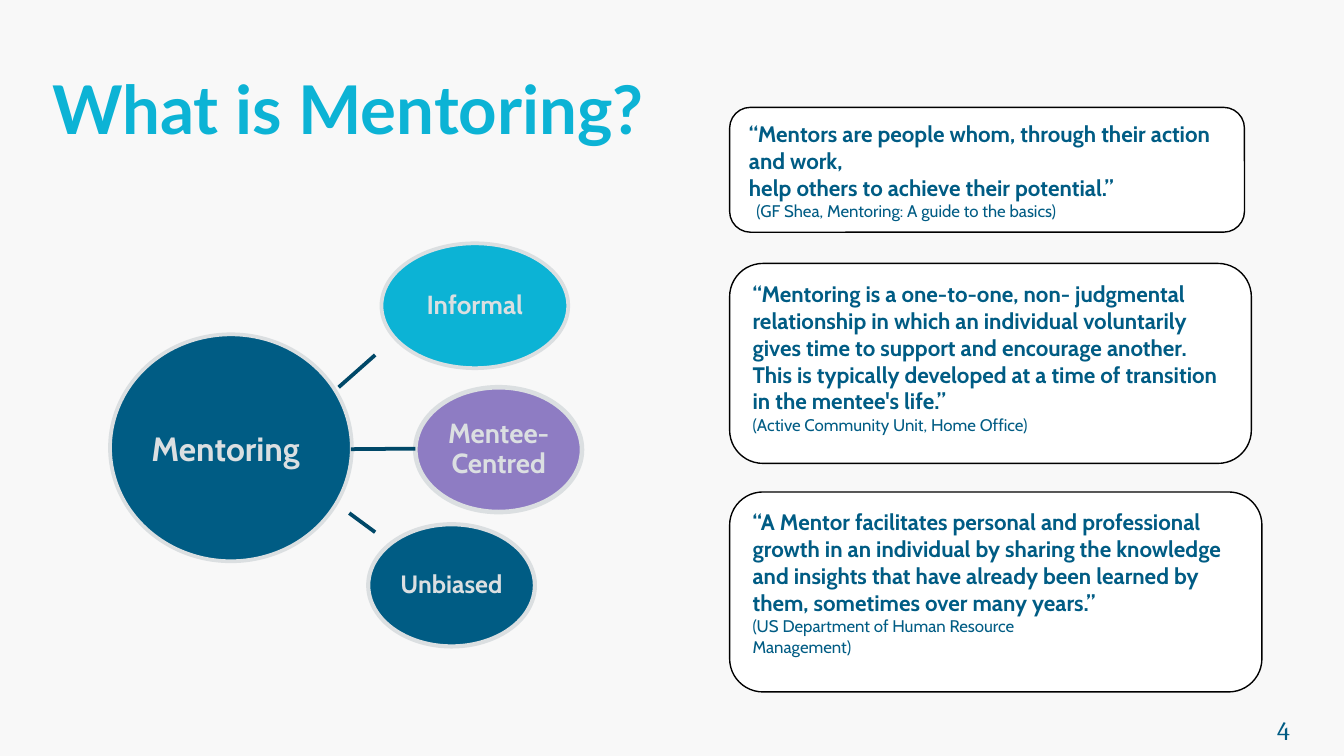
from lxml import etree
from pptx import Presentation
from pptx.dml.color import RGBColor
from pptx.enum.shapes import MSO_CONNECTOR, MSO_SHAPE
from pptx.enum.text import MSO_ANCHOR, PP_ALIGN
from pptx.oxml.ns import qn
from pptx.util import Cm, Pt

OVAL = MSO_SHAPE.OVAL
CARD = MSO_SHAPE.FLOWCHART_ALTERNATE_PROCESS
STRAIGHT = MSO_CONNECTOR.STRAIGHT
TOP, MIDDLE, BOTTOM = MSO_ANCHOR.TOP, MSO_ANCHOR.MIDDLE, MSO_ANCHOR.BOTTOM
LEFT, CENTER, RIGHT = PP_ALIGN.LEFT, PP_ALIGN.CENTER, PP_ALIGN.RIGHT

COLORS = {
    "background": "F8F8F8",
    "cyan": "0CB3D5",
    "blue": "005C84",
    "purple": "8E7CC3",
    "pale": "DBDFE1",
    "navy": "004868",
    "white": "FFFFFF",
    "black": "000000",
}


def rgb(name):
    return RGBColor.from_string(COLORS[name])


def write(p, text, font="Cabin", size=12, color="blue", bold=True,
          align=LEFT, spacing=1.0, indent=0):
    p.alignment = align
    p.line_spacing = spacing
    if indent:
        p._p.get_or_add_pPr().set("marL", str(Cm(indent)))
    r = p.add_run()
    r.text = text
    r.font.name = font
    r.font.size = Pt(size)
    r.font.bold = bold
    r.font.color.rgb = rgb(color)


class Deck:
    def __init__(self, width, height):
        self.prs = Presentation()
        self.prs.slide_width, self.prs.slide_height = Cm(width), Cm(height)
        self.s = self.prs.slides.add_slide(self.prs.slide_layouts[6])
        fill = self.s.background.fill
        fill.solid()
        fill.fore_color.rgb = rgb("background")

    def frame(self, sp, anchor, insets):
        tf = sp.text_frame
        tf.word_wrap = True
        tf.vertical_anchor = anchor
        tf.margin_left, tf.margin_top, tf.margin_right, tf.margin_bottom = map(Cm, insets)
        return tf

    def label(self, box, text, **style):
        sp = self.s.shapes.add_textbox(*map(Cm, box))
        tf = self.frame(sp, BOTTOM, (0, 0, 0, 0))
        write(tf.paragraphs[0], text, **style)

    def shape(self, kind, box, fill, line, weight):
        sp = self.s.shapes.add_shape(kind, *map(Cm, box))
        sp.shadow.inherit = False
        sp.fill.solid()
        sp.fill.fore_color.rgb = rgb(fill)
        sp.line.color.rgb = rgb(line)
        sp.line.width = Pt(weight)
        return sp

    def bubble(self, box, text, fill, size, weight=2, spacing=0.9, right=0.03):
        sp = self.shape(OVAL, box, fill, "pale", weight)
        tf = self.frame(sp, MIDDLE, (0.03, 0.03, right, 0.03))
        write(tf.paragraphs[0], text, size=size, color="pale", align=CENTER, spacing=spacing)

    def quote(self, box, lines, source, indent=0):
        sp = self.shape(CARD, box, "white", "black", 0.75)
        tf = self.frame(sp, TOP, (0.25, 0.13, 0.25, 0.13))
        styled = [(t, {}) for t in lines]
        styled += [(t, {"size": 9, "bold": False, "indent": indent}) for t in source]
        for i, (text, style) in enumerate(styled):
            p = tf.add_paragraph() if i else tf.paragraphs[0]
            write(p, text, **style)

    def spoke(self, x1, y1, x2, y2):
        sp = self.s.shapes.add_connector(STRAIGHT, Cm(x1), Cm(y1), Cm(x2), Cm(y2))
        sp.line.color.rgb = rgb("navy")
        sp.line.width = Pt(2)
        etree.SubElement(sp._element.spPr, qn("a:effectLst"))


def main():
    deck = Deck(25.4, 14.29)
    deck.label((0.99, 0, 23.42, 2.79), "What is Mentoring?", font="Lato", size=36, color="cyan")
    deck.label((19.1, 13.13, 5.28, 0.97), "4", font="Cambria", size=14, bold=False, align=RIGHT)

    deck.bubble((2.08, 6.32, 4.57, 4.29), "Mentoring", "blue", 18, spacing=1.0, right=0.23)
    deck.bubble((7.21, 4.6, 3.53, 2.36), "Informal", "cyan", 14)
    deck.bubble((7.85, 7.32, 3.15, 2.36), "Mentee-Centred", "purple", 14.8, weight=2.46)
    deck.bubble((6.96, 9.91, 3.15, 2.31), "Unbiased", "blue", 13.4, weight=2.25)

    for ends in ((6.4, 7.32, 7.09, 6.71), (6.63, 8.49, 7.85, 8.48), (6.6, 9.7, 7.09, 10.06)):
        deck.spoke(*ends)

    left = 13.79
    deck.quote(
        (left, 2.03, 9.73, 2.36),
        ["“Mentors are people whom, through their action and work,",
         "help others to achieve their potential.”"],
        ["(GF Shea, Mentoring: A guide to the basics)"],
        indent=0.14,
    )
    deck.quote(
        (left, 4.98, 9.86, 3.78),
        ["“Mentoring is a one-to-one, non- judgmental relationship in which an "
         "individual voluntarily gives time to support and encourage another. "
         "This is typically developed at a time of transition in the mentee's life.”"],
        ["(Active Community Unit, Home Office)"],
    )
    deck.quote(
        (left, 9.3, 10.06, 3.78),
        ["“A Mentor facilitates personal and professional growth in an individual "
         "by sharing the knowledge and insights that have already been learned by "
         "them, sometimes over many years.”"],
        ["(US Department of Human Resource", "Management)"],
    )
    deck.prs.save("out.pptx")


if __name__ == "__main__":
    main()
